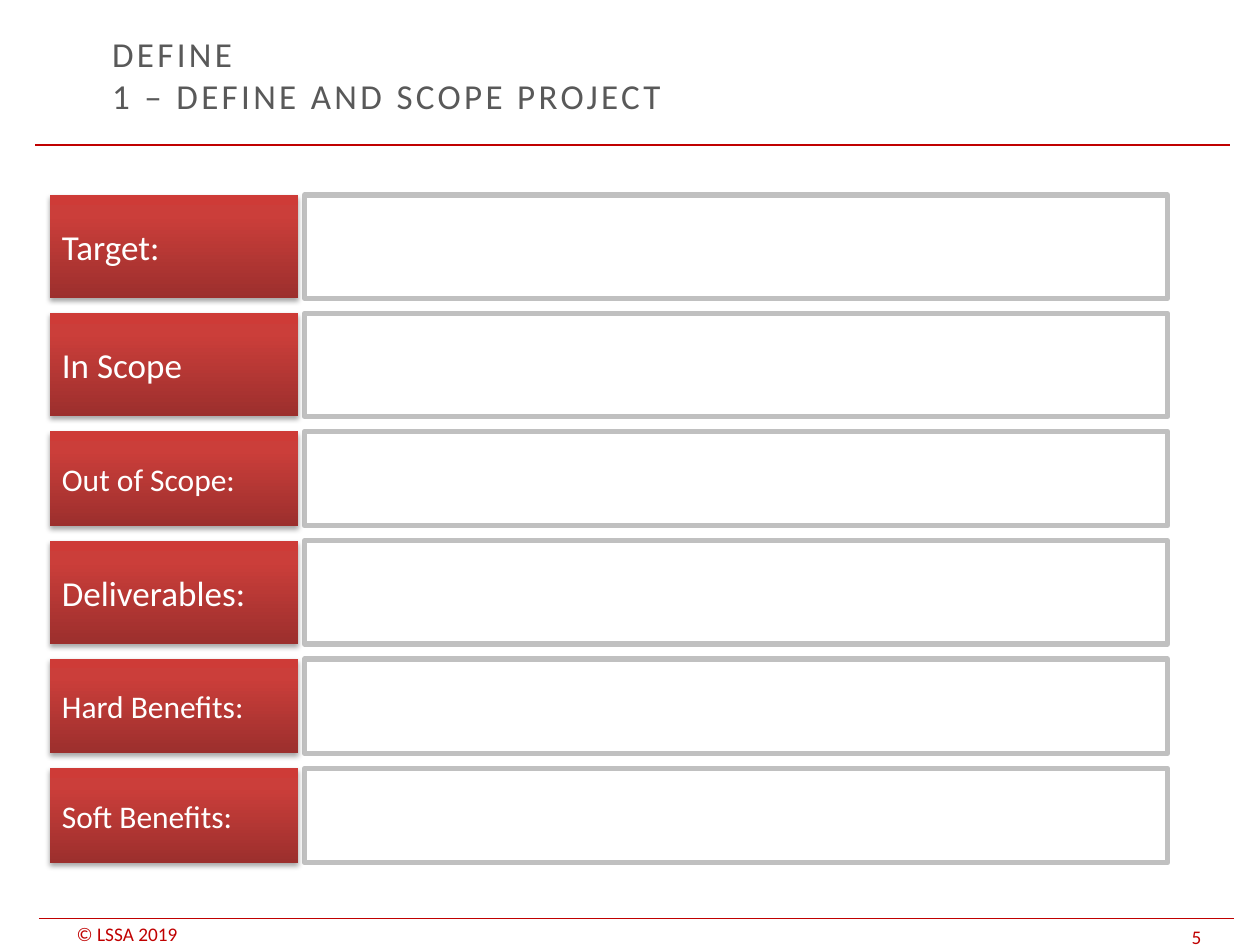
from lxml import etree
from pptx import Presentation
from pptx.dml.color import RGBColor
from pptx.enum.shapes import MSO_CONNECTOR as CONN, MSO_SHAPE as SHAPE
from pptx.enum.text import MSO_ANCHOR as ANCHOR, MSO_AUTO_SIZE as AUTO, PP_ALIGN as ALIGN
from pptx.oxml import parse_xml
from pptx.oxml.ns import nsdecls, qn
from pptx.util import Pt

COLORS = {
    "red": "C00000", "grey": "C0C0C0", "title": "595959", "white": "FFFFFF",
    "dark": "9C2F2D", "mid": "CB3E3A", "light": "CE3B37", "shadow": "000000",
}
FONT = "Calibri"

# Label, row height, text size
ROWS = [
    ("Target:", 59, 20),
    ("In Scope", 59, 20),
    ("Out of Scope:", 54, 18),
    ("Deliverables:", 59, 20),
    ("Hard Benefits:", 54, 18),
    ("Soft Benefits:", 54, 18),
]
ROWS_TOP, ROW_GAP = 111.5, 8.5
LABEL_LEFT, LABEL_WIDTH = 28.3, 142
FIELD_LEFT, FIELD_WIDTH = 174, 493.2


def rgb(name):
    return RGBColor.from_string(COLORS[name])


def write(sp, text, size=20, color="white", anchor=ANCHOR.MIDDLE, spacing=0):
    tf = sp.text_frame
    tf.word_wrap = True
    tf.auto_size = AUTO.NONE
    tf.vertical_anchor = anchor
    tf.text = text
    p = tf.paragraphs[0]
    p.alignment = ALIGN.LEFT
    for r in p.runs:
        r.font.name = FONT
        r.font.size = Pt(size)
        r.font.color.rgb = rgb(color)
        if spacing:
            r.font._element.set("spc", str(round(spacing * 100)))


def add_title(slide, text):
    sp = slide.shapes.title
    sp.left, sp.top, sp.width, sp.height = Pt(56.9), Pt(18.7), Pt(510.5), Pt(47.5)
    write(sp, text, color="title", spacing=1.9)


def add_rule(slide, x1, x2, y):
    line = slide.shapes.add_connector(CONN.STRAIGHT, Pt(x1), Pt(y), Pt(x2), Pt(y))
    line.line.color.rgb = rgb("red")
    line.line.width = Pt(0.75)
    etree.SubElement(line._element.spPr, qn("a:effectLst"))


def add_footer(slide, text, x, y, w, h):
    sp = slide.shapes.add_textbox(Pt(x), Pt(y), Pt(w), Pt(h))
    tf = sp.text_frame
    tf.margin_top = tf.margin_bottom = 0
    write(sp, text, size=11, color="red", anchor=ANCHOR.BOTTOM)


def add_rect(slide, x, y, w, h):
    sp = slide.shapes.add_shape(SHAPE.RECTANGLE, Pt(x), Pt(y), Pt(w), Pt(h))
    sp.shadow.inherit = False
    return sp


def add_field(slide, y, h):
    sp = add_rect(slide, FIELD_LEFT, y, FIELD_WIDTH, h)
    sp.fill.solid()
    sp.fill.fore_color.rgb = rgb("white")
    sp.line.color.rgb = rgb("grey")
    sp.line.width = Pt(3)


def add_label(slide, text, y, h, size):
    sp = add_rect(slide, LABEL_LEFT, y, LABEL_WIDTH, h)
    sp.line.fill.background()
    spPr = sp._element.spPr
    # Gradient running upwards from dark to light
    stops = "".join(
        f'<a:gs pos="{pos * 1000}"><a:srgbClr val="{COLORS[name]}"/></a:gs>'
        for pos, name in ((0, "dark"), (80, "mid"), (100, "light")))
    spPr.find(qn("a:prstGeom")).addnext(parse_xml(
        f'<a:gradFill {nsdecls("a")} rotWithShape="1"><a:gsLst>{stops}</a:gsLst>'
        '<a:lin ang="16200000" scaled="0"/></a:gradFill>'))
    # Soft shadow below
    spPr.find(qn("a:effectLst")).append(parse_xml(
        f'<a:outerShdw {nsdecls("a")} blurRad="{Pt(3.1)}" dist="{Pt(1.8)}" '
        'dir="5400000" rotWithShape="0">'
        f'<a:srgbClr val="{COLORS["shadow"]}"><a:alpha val="35000"/></a:srgbClr>'
        '</a:outerShdw>'))
    write(sp, text, size=size)


def main():
    prs = Presentation()
    prs.slide_width, prs.slide_height = Pt(720), Pt(540)
    slide = prs.slides.add_slide(prs.slide_layouts[5])

    # Header and footer
    add_title(slide, "DEFINE\v1 – DEFINE AND SCOPE PROJECT")
    add_rule(slide, 20.2, 702.7, 82.8)
    add_rule(slide, 22.3, 704.9, 524.9)
    add_footer(slide, "© LSSA 2019", 36.7, 527, 102.2, 13)
    add_footer(slide, "5", 673.9, 526.3, 46.1, 15.8)

    # Form rows
    y = ROWS_TOP
    for text, height, size in ROWS:
        add_field(slide, y, height)
        add_label(slide, text, y, height, size)
        y += height + ROW_GAP

    prs.save("out.pptx")


if __name__ == "__main__":
    main()
